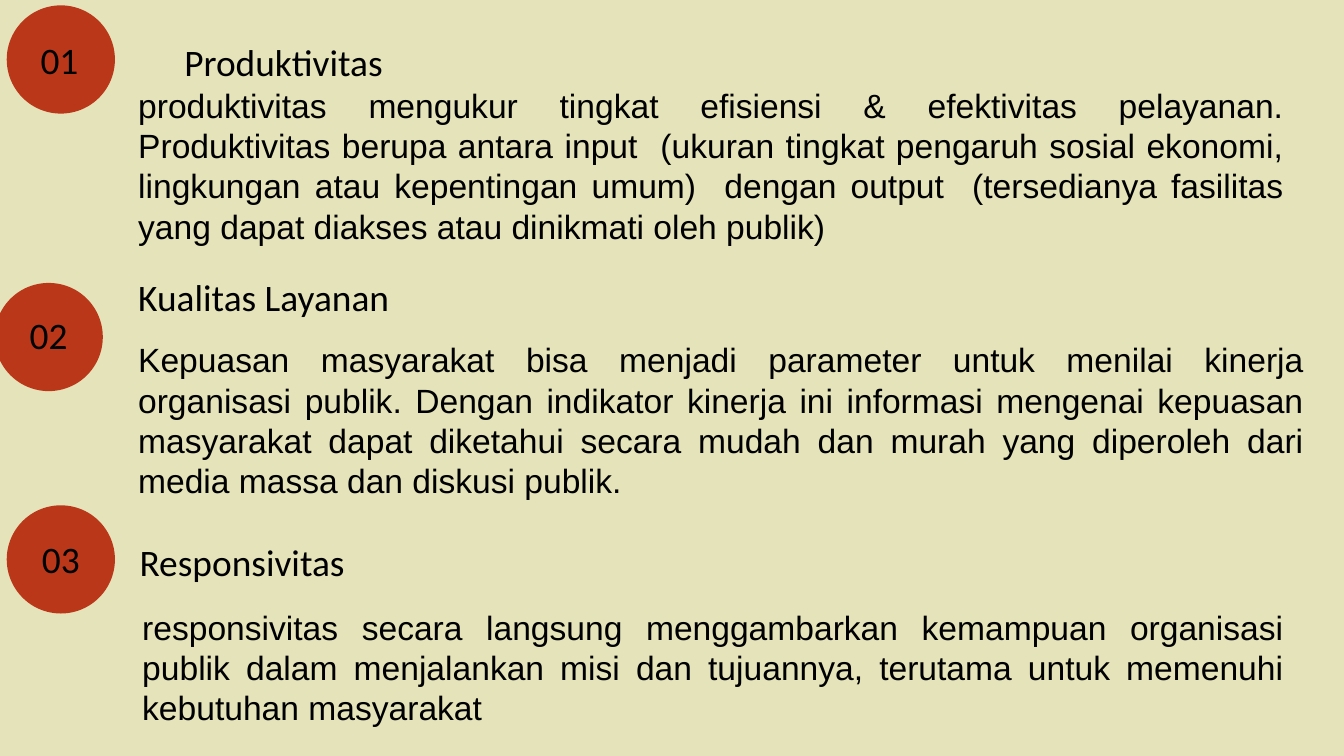
import pptx
import pptx.util
import pptx.dml.color
import pptx.enum.shapes
import pptx.enum.text

CREAM = pptx.dml.color.RGBColor(0xE4, 0xE3, 0xB9)
RUST = pptx.dml.color.RGBColor(0xBA, 0x37, 0x1A)
BLACK = pptx.dml.color.RGBColor(0, 0, 0)
ALIGN = pptx.enum.text.PP_ALIGN
ANCHOR = pptx.enum.text.MSO_ANCHOR
EMU_PER_PX = 4572  # 200 px to the inch


def px(*lengths):
    return [pptx.util.Emu(length * EMU_PER_PX) for length in lengths]


class Painter:
    """Holds the style and the current slide."""

    heading_font, heading_size = "Calibri", 20
    body_font, body_size = "Arial", 18
    disc_size = 161

    def __init__(self, page):
        self.page = page
        page.background.fill.solid()
        page.background.fill.fore_color.rgb = CREAM

    def disc(self, left, top):
        disc = self.page.shapes.add_shape(
            pptx.enum.shapes.MSO_SHAPE.OVAL,
            *px(left, top, self.disc_size, self.disc_size))
        disc.shadow.inherit = False
        disc.fill.solid()
        disc.fill.fore_color.rgb = RUST
        disc.line.fill.background()

    def text(self, place, words, font, size, align, anchor, inset):
        box = self.page.shapes.add_textbox(*px(*place))
        frame = box.text_frame
        frame.word_wrap = True
        frame.vertical_anchor = anchor
        frame.margin_left, frame.margin_right = px(20, 20)
        frame.margin_top, frame.margin_bottom = px(inset, inset)
        para = frame.paragraphs[0]
        para.alignment = align
        span = para.add_run()
        span.text = words
        span.font.name = font
        span.font.size = pptx.util.Pt(size)
        span.font.color.rgb = BLACK
        return box

    def number(self, left, top, words):
        self.text((left, top, self.disc_size, 98), words, self.heading_font,
                  self.heading_size, ALIGN.CENTER, ANCHOR.MIDDLE, 20)

    def heading(self, left, top, words, align):
        self.text((left, top, 504, 106), words, self.heading_font,
                  self.heading_size, align, ANCHOR.BOTTOM, 20)

    def body(self, place, words):
        box = self.text(place, words, self.body_font, self.body_size,
                        ALIGN.JUSTIFY, ANCHOR.TOP, 10)
        box.text_frame.auto_size = pptx.enum.text.MSO_AUTO_SIZE.SHAPE_TO_FIT_TEXT


# Each indicator: disc, number, heading and body places, then the wording
INDICATORS = [
    ((10, 8), (8, 40), (170, 39), (186, 116, 1744, 262), ALIGN.CENTER,
     "Produktivitas",
     "produktivitas mengukur tingkat efisiensi & efektivitas pelayanan. "
     "Produktivitas berupa antara input  (ukuran tingkat pengaruh sosial "
     "ekonomi, lingkungan atau kepentingan umum)  dengan output  (tersedianya "
     "fasilitas yang dapat diakses atau dinikmati oleh publik)"),
    ((-8, 421), (-8, 449), (186, 389), (186, 495, 1774, 262), ALIGN.LEFT,
     "Kualitas Layanan",
     "Kepuasan masyarakat bisa menjadi parameter untuk menilai kinerja "
     "organisasi publik. Dengan indikator kinerja ini informasi mengenai "
     "kepuasan masyarakat dapat diketahui secara mudah dan murah yang "
     "diperoleh dari media massa dan diskusi publik."),
    ((10, 752), (10, 782), (188, 783), (192, 893, 1738, 202), ALIGN.LEFT,
     "Responsivitas",
     "responsivitas secara langsung menggambarkan kemampuan organisasi "
     "publik dalam menjalankan misi dan tujuannya, terutama untuk memenuhi "
     "kebutuhan masyarakat"),
]


def main():
    deck = pptx.Presentation()
    deck.slide_width, deck.slide_height = px(2000, 1125)
    painter = Painter(deck.slides.add_slide(deck.slide_layouts[6]))

    # Numbered indicators, top to bottom
    for order, indicator in enumerate(INDICATORS, start=1):
        disc, number, heading, body, align, title, words = indicator
        painter.disc(*disc)
        painter.number(*number, f"{order:02}")
        painter.heading(*heading, title, align)
        painter.body(body, words)

    deck.save("out.pptx")


if __name__ == "__main__":
    main()
